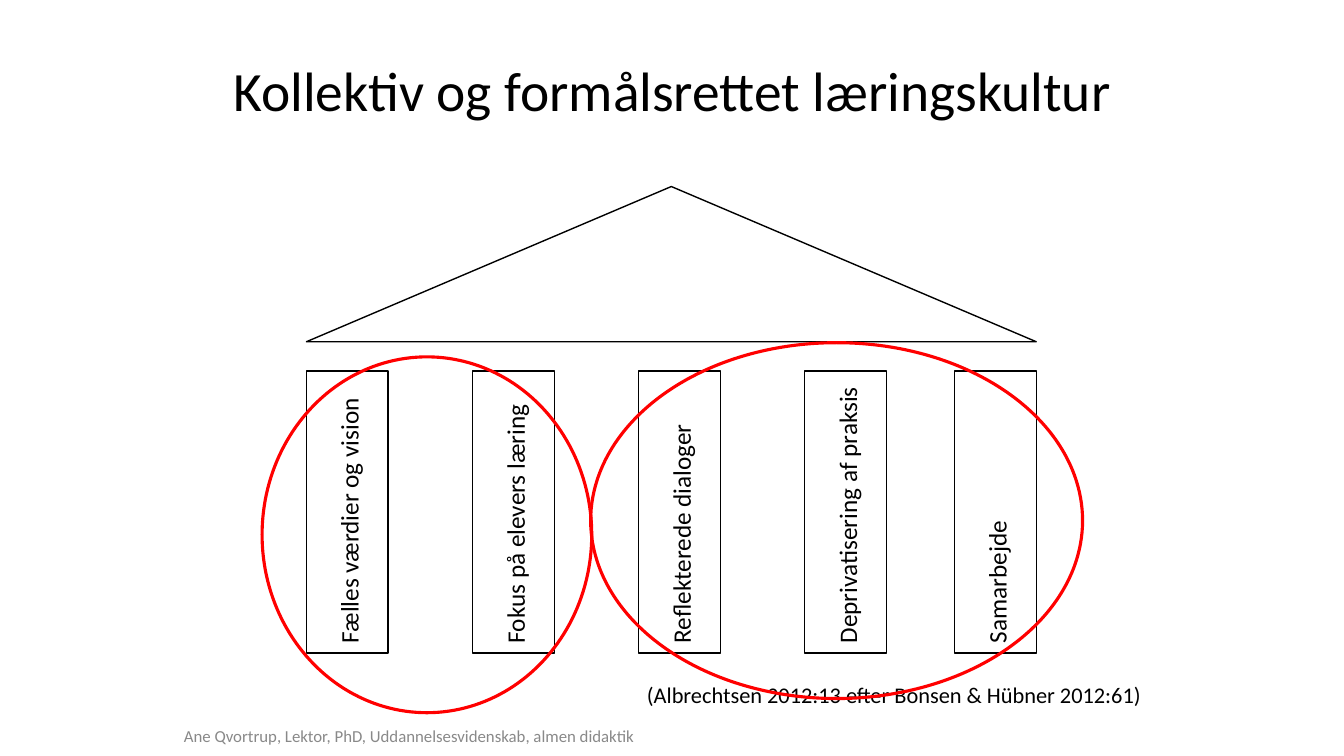
import pptx
import pptx.dml.color
import pptx.enum.shapes
import pptx.enum.text
import pptx.util

BLACK = pptx.dml.color.RGBColor(0, 0, 0)
WHITE = pptx.dml.color.RGBColor(255, 255, 255)
RED = pptx.dml.color.RGBColor(255, 0, 0)
GREY = pptx.dml.color.RGBColor(0x89, 0x89, 0x89)

SHAPES = pptx.enum.shapes.MSO_SHAPE
ALIGN = pptx.enum.text.PP_ALIGN
ANCHOR = pptx.enum.text.MSO_ANCHOR

SLIDE_WIDTH = pptx.util.Inches(13.33)
SLIDE_HEIGHT = pptx.util.Inches(7.5)

ROOF = (22.8, 24.67, 54.3, 20.53)
PILLAR_TOP, PILLAR_WIDTH, PILLAR_HEIGHT = 49.07, 6.08, 37.33
PILLAR_STEP = 12.36
LABEL_WIDTH, LABEL_HEIGHT = 21, 5.33
LABEL_SHIFT = 0.1
PILLARS = [
    "Fælles værdier og vision",
    "Fokus på elevers læring",
    "Reflekterede dialoger",
    "Deprivatisering af praksis",
    "Samarbejde",
]
RINGS = [(19.5, 47.2, 24.53, 47.07), (43.95, 45.33, 36.6, 47.07)]


def place(left, top, width, height):
    """Turn percentages of the slide's size into lengths."""
    return (
        int(SLIDE_WIDTH * left / 100),
        int(SLIDE_HEIGHT * top / 100),
        int(SLIDE_WIDTH * width / 100),
        int(SLIDE_HEIGHT * height / 100),
    )


def add_outline(slide, kind, box, color, weight, fill=None):
    """Add an outlined preset shape, unfilled unless a fill is given."""
    shape = slide.shapes.add_shape(kind, *place(*box))
    shape.shadow.inherit = False
    if fill is None:
        shape.fill.background()
    else:
        shape.fill.solid()
        shape.fill.fore_color.rgb = fill
    shape.line.color.rgb = color
    shape.line.width = pptx.util.Pt(weight)


def add_text(slide, text, box, size, color=BLACK, align=ALIGN.LEFT, anchor=ANCHOR.TOP):
    """Add a wrapping one-paragraph text box and return it."""
    shape = slide.shapes.add_textbox(*place(*box))
    frame = shape.text_frame
    frame.word_wrap = True
    frame.vertical_anchor = anchor
    paragraph = frame.paragraphs[0]
    paragraph.text = text
    paragraph.alignment = align
    paragraph.font.name = "Calibri"
    paragraph.font.size = pptx.util.Pt(size)
    paragraph.font.color.rgb = color
    return shape


def add_pillar(slide, text, left):
    """Add a pillar with its label turned to read upwards."""
    box = (left, PILLAR_TOP, PILLAR_WIDTH, PILLAR_HEIGHT)
    add_outline(slide, SHAPES.RECTANGLE, box, BLACK, 1)
    label_left = left + (PILLAR_WIDTH - LABEL_WIDTH) / 2 + LABEL_SHIFT
    label_top = PILLAR_TOP + (PILLAR_HEIGHT - LABEL_HEIGHT) / 2
    label = add_text(slide, text, (label_left, label_top, LABEL_WIDTH, LABEL_HEIGHT), 18)
    label.rotation = 270


def main():
    """Build the slide with the temple of learning culture."""
    presentation = pptx.Presentation()
    presentation.slide_width = SLIDE_WIDTH
    presentation.slide_height = SLIDE_HEIGHT
    slide = presentation.slides.add_slide(presentation.slide_layouts[6])

    add_outline(slide, SHAPES.ISOSCELES_TRIANGLE, ROOF, BLACK, 1, WHITE)
    last_left = ROOF[0] + ROOF[2] - PILLAR_WIDTH
    for index, text in enumerate(PILLARS):
        add_pillar(slide, text, min(ROOF[0] + index * PILLAR_STEP, last_left))

    add_text(slide, "(Albrechtsen 2012:13 efter Bonsen & Hübner 2012:61)",
             (47.4, 89.47, 38.85, 4.93), 16)
    add_text(slide, "Ane Qvortrup, Lektor, PhD, Uddannelsesvidenskab, almen didaktik",
             (12.53, 94.67, 35.85, 5.33), 12, GREY, ALIGN.CENTER, ANCHOR.MIDDLE)
    for ring in RINGS:
        add_outline(slide, SHAPES.OVAL, ring, RED, 2.25)
    title = add_text(slide, "Kollektiv og formålsrettet læringskultur",
                     (16.28, 4, 67.5, 16.67), 39.6, BLACK, ALIGN.CENTER, ANCHOR.MIDDLE)
    title.text_frame.paragraphs[0].line_spacing = 0.9

    presentation.save("out.pptx")


if __name__ == "__main__":
    main()
